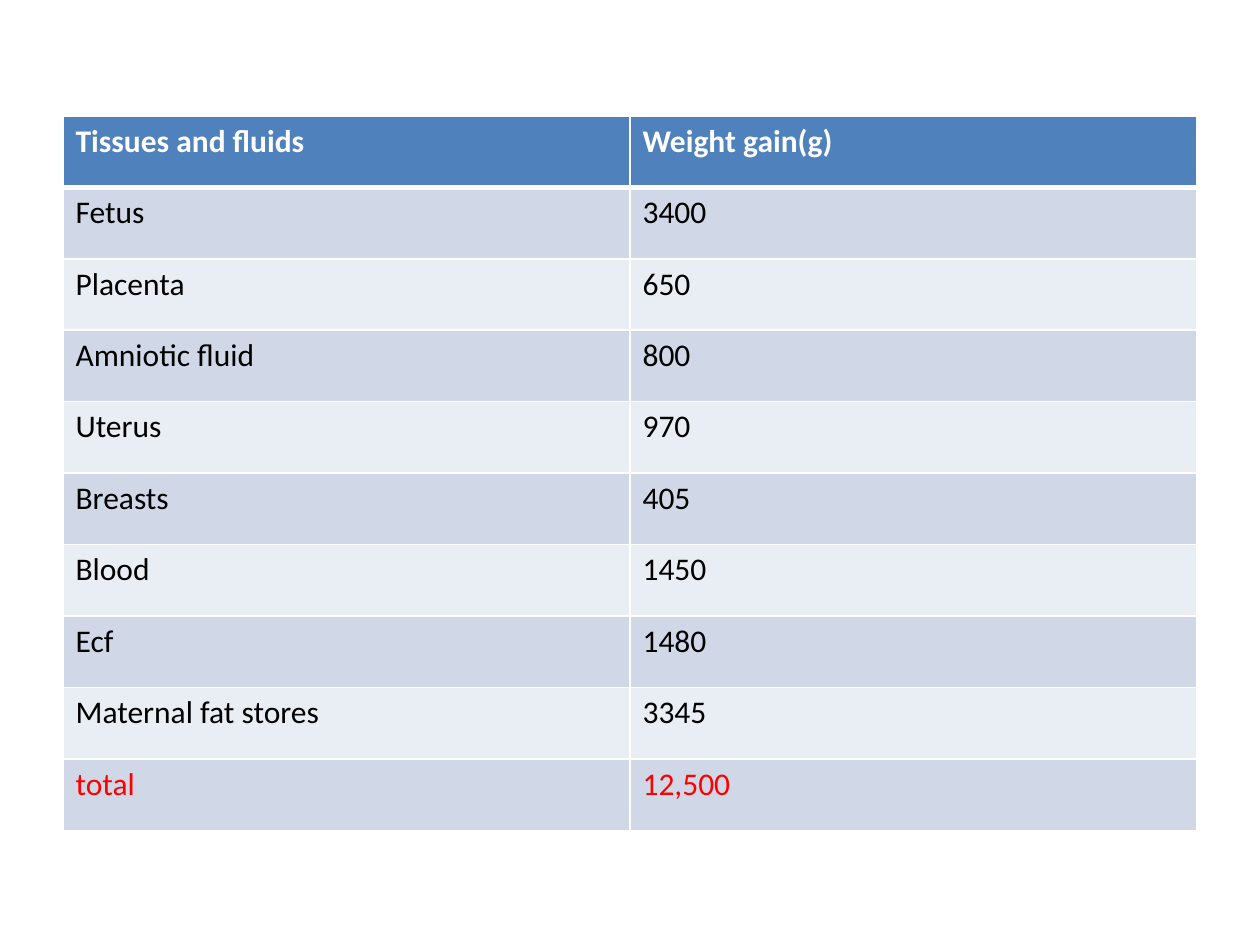
import dataclasses

import pptx
import pptx.dml.color
import pptx.oxml.ns
import pptx.util
from lxml import etree

Inches = pptx.util.Inches
RGBColor = pptx.dml.color.RGBColor


@dataclasses.dataclass(frozen=True)
class Theme:
    font: str = "Calibri"
    text_size: int = 18
    header_fill: str = "4F81BD"
    band_fills: tuple = ("D0D8E8", "E9EDF4")
    header_text: str = "FFFFFF"
    body_text: str = "000000"
    total_text: str = "FF0000"
    border: str = "FFFFFF"
    thin_border: int = 1
    header_border: int = 3


class PageBuilder:
    def __init__(self, page, theme):
        self.page = page
        self.theme = theme

    def table(self, rows, left, top, column_width, row_height):
        """Add a table with a header first and a highlighted total last."""
        theme = self.theme
        row_count, column_count = len(rows), len(rows[0])
        frame = self.page.shapes.add_table(
            row_count, column_count, Inches(left), Inches(top),
            Inches(column_width * column_count), Inches(row_height * row_count))
        grid = frame.table
        for column in grid.columns:
            column.width = Inches(column_width)
        for row_index, values in enumerate(rows):
            grid.rows[row_index].height = Inches(row_height)
            is_header = row_index == 0
            fill = theme.header_fill if is_header else theme.band_fills[(row_index - 1) % 2]
            color = theme.body_text
            if is_header:
                color = theme.header_text
            elif row_index == row_count - 1:
                color = theme.total_text
            widths = dict.fromkeys(("lnL", "lnR", "lnT", "lnB"), theme.thin_border)
            if is_header:
                widths["lnB"] = theme.header_border
            elif row_index == 1:
                widths["lnT"] = theme.header_border
            for column_index, value in enumerate(values):
                cell = grid.cell(row_index, column_index)
                self.borders(cell, widths)
                cell.fill.solid()
                cell.fill.fore_color.rgb = RGBColor.from_string(fill)
                self.text(cell, value, color, is_header)

    def borders(self, cell, widths):
        properties = cell._tc.get_or_add_tcPr()
        qualified = pptx.oxml.ns.qn
        for side, width in widths.items():
            line = etree.SubElement(
                properties, qualified(f"a:{side}"), w=str(pptx.util.Pt(width)))
            solid = etree.SubElement(line, qualified("a:solidFill"))
            etree.SubElement(solid, qualified("a:srgbClr"), val=self.theme.border)

    def text(self, cell, value, color, bold):
        span = cell.text_frame.paragraphs[0].add_run()
        span.text = value
        font_format = {
            "name": self.theme.font,
            "size": pptx.util.Pt(self.theme.text_size),
            "bold": bold,
        }
        for attribute, setting in font_format.items():
            setattr(span.font, attribute, setting)
        span.font.color.rgb = RGBColor.from_string(color)


WEIGHT_GAIN = [
    ("Tissues and fluids", "Weight gain(g)"),
    ("Fetus", "3400"),
    ("Placenta", "650"),
    ("Amniotic fluid", "800"),
    ("Uterus", "970"),
    ("Breasts", "405"),
    ("Blood", "1450"),
    ("Ecf", "1480"),
    ("Maternal fat stores", "3345"),
    ("total", "12,500"),
]


def main():
    deck = pptx.Presentation()
    deck.slide_width, deck.slide_height = Inches(10), Inches(7.5)
    page = deck.slides.add_slide(deck.slide_layouts[6])
    builder = PageBuilder(page, Theme())
    builder.table(WEIGHT_GAIN, left=0.5, top=0.92, column_width=4.5, row_height=0.567)
    deck.save("out.pptx")


if __name__ == "__main__":
    main()
